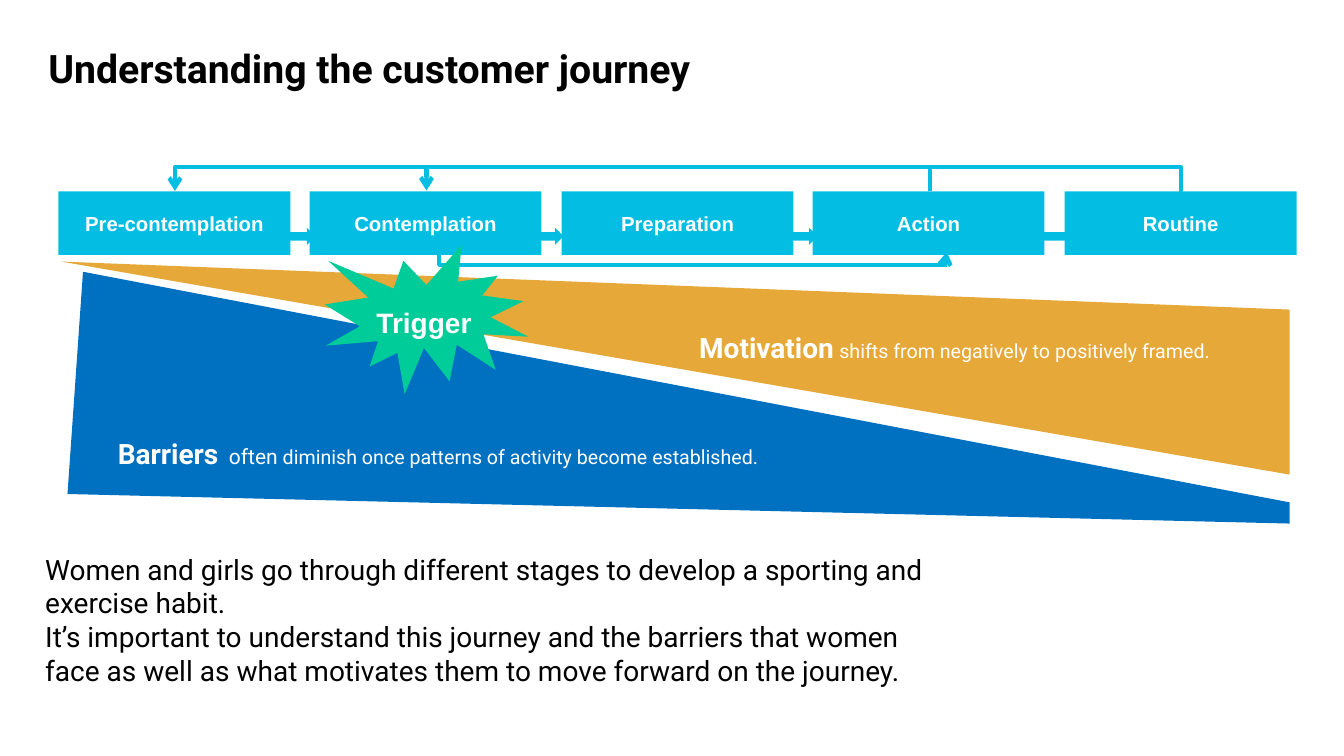
import pptx
import pptx.dml.color
import pptx.enum.shapes
import pptx.enum.text
import pptx.oxml
import pptx.oxml.ns
import pptx.util

PX = 9144  # 100 px to the inch
COLORS = {"cyan": "04BDE2", "blue": "0070C0", "amber": "E6A838",
          "green": "00CC99", "white": "FFFFFF", "black": "000000"}
SHAPE = pptx.enum.shapes.MSO_SHAPE
ALIGN = pptx.enum.text.PP_ALIGN
MIDDLE = pptx.enum.text.MSO_ANCHOR.MIDDLE
TOP = pptx.enum.text.MSO_ANCHOR.TOP


def write(box, paragraphs, font="Roboto", color="white", align=ALIGN.LEFT,
          anchor=TOP, spacing=None):
    """Fill a box with paragraphs, each a list of (text, size, bold) runs."""
    frame = box.text_frame
    frame.word_wrap = True
    frame.vertical_anchor = anchor
    for index, runs in enumerate(paragraphs):
        para = frame.paragraphs[0] if index == 0 else frame.add_paragraph()
        para.alignment = align
        para.line_spacing = spacing
        for text, size, bold in runs:
            span = para.add_run()
            span.text = text
            span.font.name = font
            span.font.size = pptx.util.Pt(size)
            span.font.bold = bold
            span.font.color.rgb = pptx.dml.color.RGBColor.from_string(COLORS[color])


def draw(kind, place, color, rotation=0, adjust=None):
    shape = page.shapes.add_shape(kind, *[length * PX for length in place])
    shape.shadow.inherit = False
    shape.fill.solid()
    shape.fill.fore_color.rgb = pptx.dml.color.RGBColor.from_string(COLORS[color])
    shape.line.fill.background()
    shape.rotation = rotation
    if adjust is not None:
        shape.adjustments[0] = adjust
    return shape


deck = pptx.Presentation()
deck.slide_width = 1333 * PX
deck.slide_height = 750 * PX
page = deck.slides.add_slide(deck.slide_layouts[5])

# Elbow arrows: place, geometry, guide values, turned upright
elbows = [
    ((440, 249, 499, 1), "bentConnector4", [-900, 1400000], False),
    ((672, -60, 1, 499), "bentConnector3", [2500000], True),
    ((672, -309, 1, 998), "bentConnector3", [2500000], True),
]
for (left, top, width, height), geometry, guides, upright in elbows:
    elbow = page.shapes.add_connector(
        pptx.enum.shapes.MSO_CONNECTOR.ELBOW,
        left * PX, top * PX, (left + width) * PX, (top + height) * PX)
    elbow.line.color.rgb = pptx.dml.color.RGBColor.from_string(COLORS["cyan"])
    elbow.line.width = pptx.util.Pt(3)
    properties = elbow._element.spPr
    if upright:
        properties.xfrm.set("rot", "16200000")
        properties.xfrm.set("flipV", "1")
    preset = properties.find(pptx.oxml.ns.qn("a:prstGeom"))
    preset.set("prst", geometry)
    values = preset.get_or_add_avLst()
    for number, guide in enumerate(guides, 1):
        entry = pptx.oxml.parse_xml(f'<a:gd {pptx.oxml.ns.nsdecls("a")}/>')
        entry.set("name", f"adj{number}")
        entry.set("fmla", f"val {guide}")
        values.append(entry)
    elbow.line._get_or_add_ln().append(pptx.oxml.parse_xml(
        f'<a:tailEnd {pptx.oxml.ns.nsdecls("a")} type="arrow"/>'))
    properties.append(pptx.oxml.parse_xml(
        f'<a:effectLst {pptx.oxml.ns.nsdecls("a")}/>'))

title = page.shapes.title
title.left, title.top, title.width, title.height = [
    length * PX for length in (38, 8, 1228, 125)]
write(title, [[("Understanding the customer journey", 28, True)]],
      color="black", anchor=MIDDLE, spacing=0.9)

stages = ["Pre-contemplation", "Contemplation", "Preparation", "Action", "Routine"]
for index, stage in enumerate(stages):
    box = draw(SHAPE.RECTANGLE, (58 + 998 * index // 4, 190, 230, 63), "cyan")
    write(box, [[(stage, 14.5, True)]], font="Arial", align=ALIGN.CENTER,
          anchor=MIDDLE)

draw(SHAPE.ISOSCELES_TRIANGLE, (631, -242, 221, 1337), "blue", 94, 0.724)
draw(SHAPE.ISOSCELES_TRIANGLE, (594, -280, 165, 1241), "amber", 274.6, 0.69)
draw(SHAPE.EXPLOSION1, (322, 243, 202, 148), "green")
for left in (263, 509, 761, 1017):
    draw(SHAPE.RIGHT_ARROW, (left, 226, 50, 17), "cyan")
# Trims the wedges to a straight right edge
draw(SHAPE.RECTANGLE, (1279, 298, 54, 266), "white")

captions = [
    ((107, 428, 688, 44),
     [[("Barriers", 20, True), ("  often", 15, False),
       (" diminish once patterns of activity become established.", 14, False)]], {}),
    ((280, 298, 281, 44), [[("Trigger", 20, True)]],
     {"font": "Arial", "align": ALIGN.CENTER}),
    ((520, 323, 695, 44),
     [[("Motivation", 20, True), (" ", 15, False),
       ("shifts from negatively to positively framed. ", 14, False)]],
     {"align": ALIGN.RIGHT}),
    ((35, 543, 914, 160),
     [[("Women and girls go through different stages to develop a sporting and "
        "exercise habit.", 20, False)],
      [("It’s important to understand this journey and the barriers that women "
        "face as well as what motivates them to move forward on the journey.",
        20, False)]],
     {"color": "black"}),
]
for place, paragraphs, style in captions:
    caption = page.shapes.add_textbox(*[length * PX for length in place])
    write(caption, paragraphs, **style)

deck.save("out.pptx")
